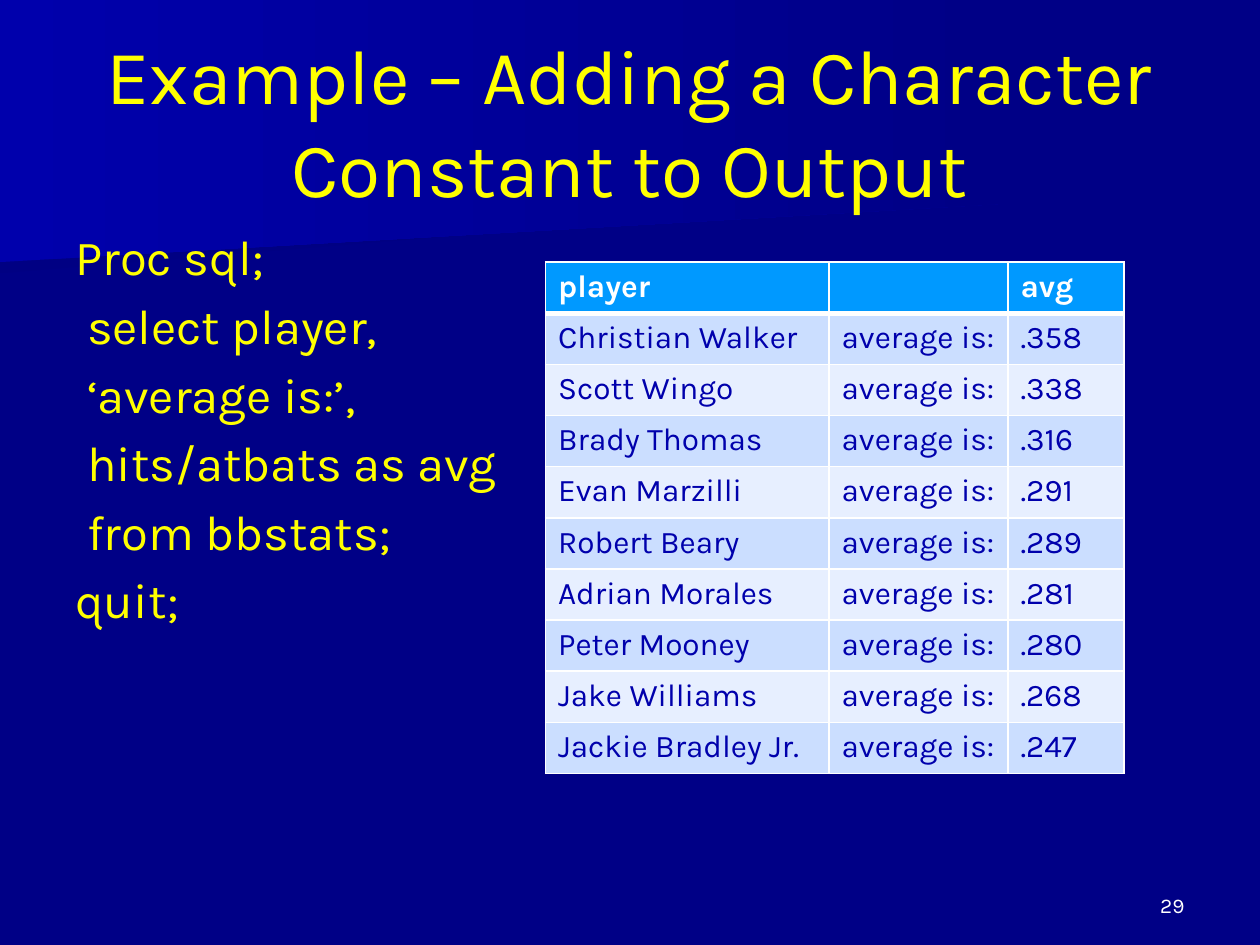
import lxml.etree
import pptx
import pptx.dml.color
import pptx.enum.text
import pptx.oxml.ns
import pptx.util

Inches = pptx.util.Inches
Pt = pptx.util.Pt
ALIGN = pptx.enum.text.PP_ALIGN
ANCHOR = pptx.enum.text.MSO_ANCHOR
qn = pptx.oxml.ns.qn

COLORS = {
    "background": "000086",
    "shade": "000083",
    "glow": "0000AC",
    "yellow": "FFFF00",
    "white": "FFFFFF",
    "header": "0099FF",
    "odd_row": "CBDEFF",
    "even_row": "E7EFFF",
}

CODE_LINES = [
    "Proc sql;",
    " select player,",
    " ‘average is:’,",
    " hits/atbats as avg",
    " from bbstats;",
    "quit;",
]

AVERAGES = [
    ("Christian Walker", ".358"),
    ("Scott Wingo", ".338"),
    ("Brady Thomas", ".316"),
    ("Evan Marzilli", ".291"),
    ("Robert Beary", ".289"),
    ("Adrian Morales", ".281"),
    ("Peter Mooney", ".280"),
    ("Jake Williams", ".268"),
    ("Jackie Bradley Jr.", ".247"),
]


def rgb(name):
    return pptx.dml.color.RGBColor.from_string(COLORS[name])


def write_text(frame, lines, size, color, bold=False, align=ALIGN.LEFT,
               space_before=0, font="Karla"):
    for index, line in enumerate(lines):
        paragraph = frame.paragraphs[0] if index == 0 else frame.add_paragraph()
        paragraph.alignment = align
        paragraph.space_before = Pt(space_before if index else 0)
        run = paragraph.add_run()
        run.text = line
        run.font.name = font
        run.font.size = Pt(size)
        run.font.bold = bold
        run.font.color.rgb = rgb(color)


class SlideBuilder:
    def __init__(self, presentation):
        self.slide = presentation.slides.add_slide(presentation.slide_layouts[5])
        self.slide.background.fill.solid()
        self.slide.background.fill.fore_color.rgb = rgb("background")

    def add_band(self, points, start_color):
        corners = [(Inches(x), Inches(y)) for x, y in points]
        builder = self.slide.shapes.build_freeform(*corners[0])
        builder.add_line_segments(corners[1:], close=True)
        shape = builder.convert_to_shape()
        shape.shadow.inherit = False
        shape.line.fill.background()
        shape.fill.gradient()
        shape.fill.gradient_angle = 0
        for stop, color in zip(shape.fill.gradient_stops, (start_color, "background")):
            stop.color.rgb = rgb(color)

    def add_title(self, text, left, top, width, height):
        title = self.slide.shapes.title
        title._element.getparent().append(title._element)
        title.left, title.top = Inches(left), Inches(top)
        title.width, title.height = Inches(width), Inches(height)
        frame = title.text_frame
        frame.word_wrap = True
        frame.auto_size = pptx.enum.text.MSO_AUTO_SIZE.NONE
        frame.vertical_anchor = ANCHOR.MIDDLE
        write_text(frame, [text], 44, "yellow", align=ALIGN.CENTER)

    def add_text(self, lines, left, top, width, height, anchor=ANCHOR.TOP, **text_format):
        shape = self.slide.shapes.add_textbox(
            Inches(left), Inches(top), Inches(width), Inches(height))
        shape.text_frame.word_wrap = True
        shape.text_frame.vertical_anchor = anchor
        write_text(shape.text_frame, lines, **text_format)

    def set_borders(self, cell, widths):
        properties = cell._tc.get_or_add_tcPr()
        for side, width in widths.items():
            line = lxml.etree.SubElement(properties, qn(f"a:ln{side}"), w=str(Pt(width)))
            fill = lxml.etree.SubElement(line, qn("a:solidFill"))
            lxml.etree.SubElement(fill, qn("a:srgbClr"), val=COLORS["white"])

    def add_table(self, rows, left, top, column_widths, height):
        row_height = height / len(rows)
        table = self.slide.shapes.add_table(
            len(rows), len(column_widths), Inches(left), Inches(top),
            Inches(sum(column_widths)), Inches(height)).table
        for column, width in zip(table.columns, column_widths):
            column.width = Inches(width)
        for row_index, values in enumerate(rows):
            table.rows[row_index].height = Inches(row_height)
            is_header = row_index == 0
            fill = "header" if is_header else "odd_row" if row_index % 2 else "even_row"
            widths = {"L": 1, "R": 1, "T": 3 if row_index == 1 else 1,
                      "B": 3 if is_header else 1}
            for column_index, value in enumerate(values):
                cell = table.cell(row_index, column_index)
                self.set_borders(cell, widths)
                cell.fill.solid()
                cell.fill.fore_color.rgb = rgb(fill)
                write_text(cell.text_frame, [value], 18,
                           "white" if is_header else "glow", bold=is_header)


def main():
    presentation = pptx.Presentation()
    presentation.slide_width = Inches(10)
    presentation.slide_height = Inches(7.5)

    builder = SlideBuilder(presentation)
    builder.add_band([(7.78, 1.53), (0, 2.17), (0, 1.01), (7.79, 1.01)], "shade")
    builder.add_band([(7.92, 1.62), (0, 2.08), (0, 0), (7.92, 0)], "glow")
    builder.add_title("Example – Adding a Character Constant to Output", 0.5, 0.33, 9, 1.25)
    builder.add_text(CODE_LINES, 0.5, 1.75, 4.42, 5.58,
                     size=28, color="yellow", space_before=5.6)
    rows = [("player", "", "avg")]
    rows += [(player, "average is:", average) for player, average in AVERAGES]
    builder.add_table(rows, 4.33, 2.08, (2.25, 1.42, 0.92), 4.06)
    builder.add_text(["29"], 7.17, 6.83, 2.33, 0.5, anchor=ANCHOR.BOTTOM,
                     size=12, color="white", align=ALIGN.RIGHT)
    presentation.save("out.pptx")


if __name__ == "__main__":
    main()
